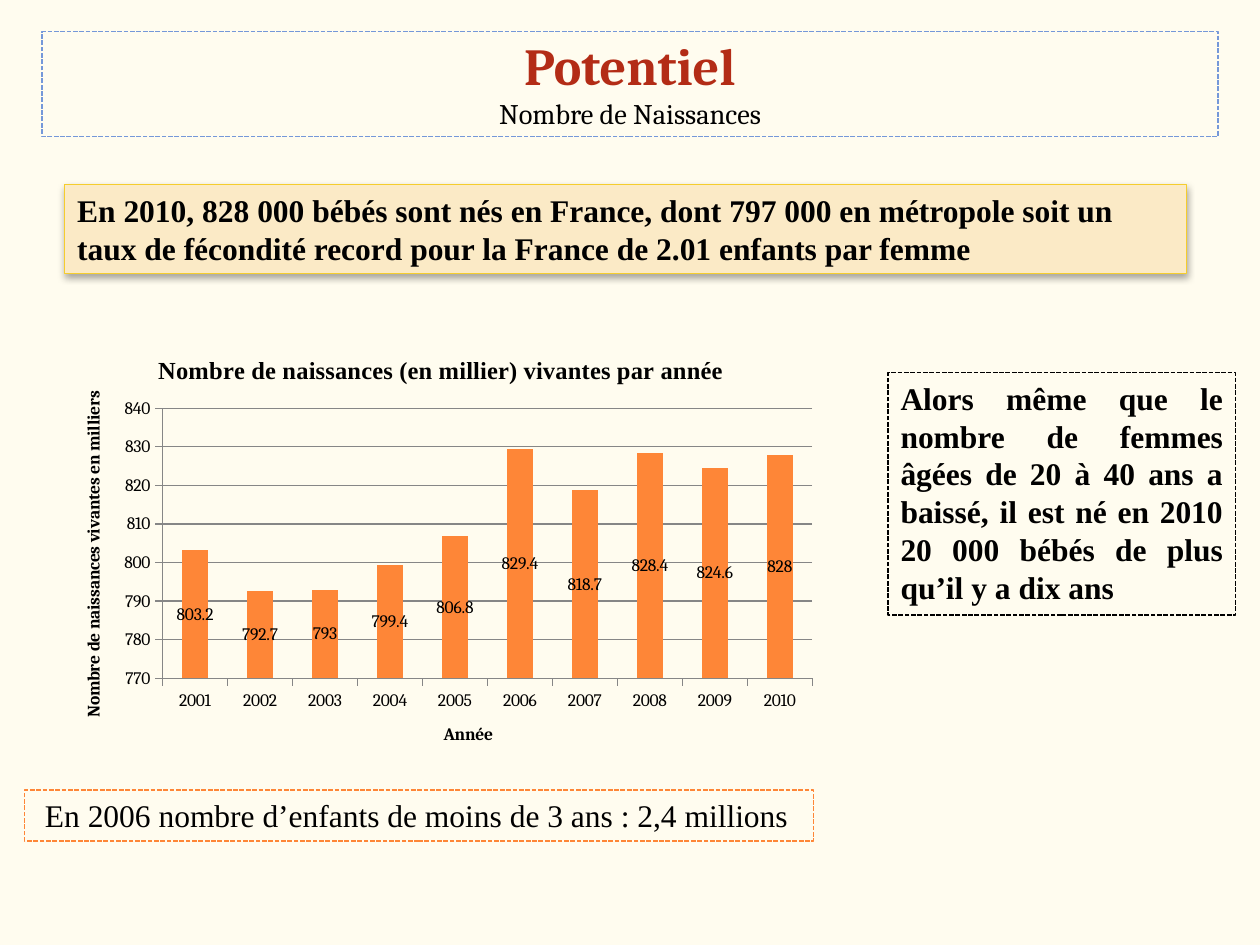
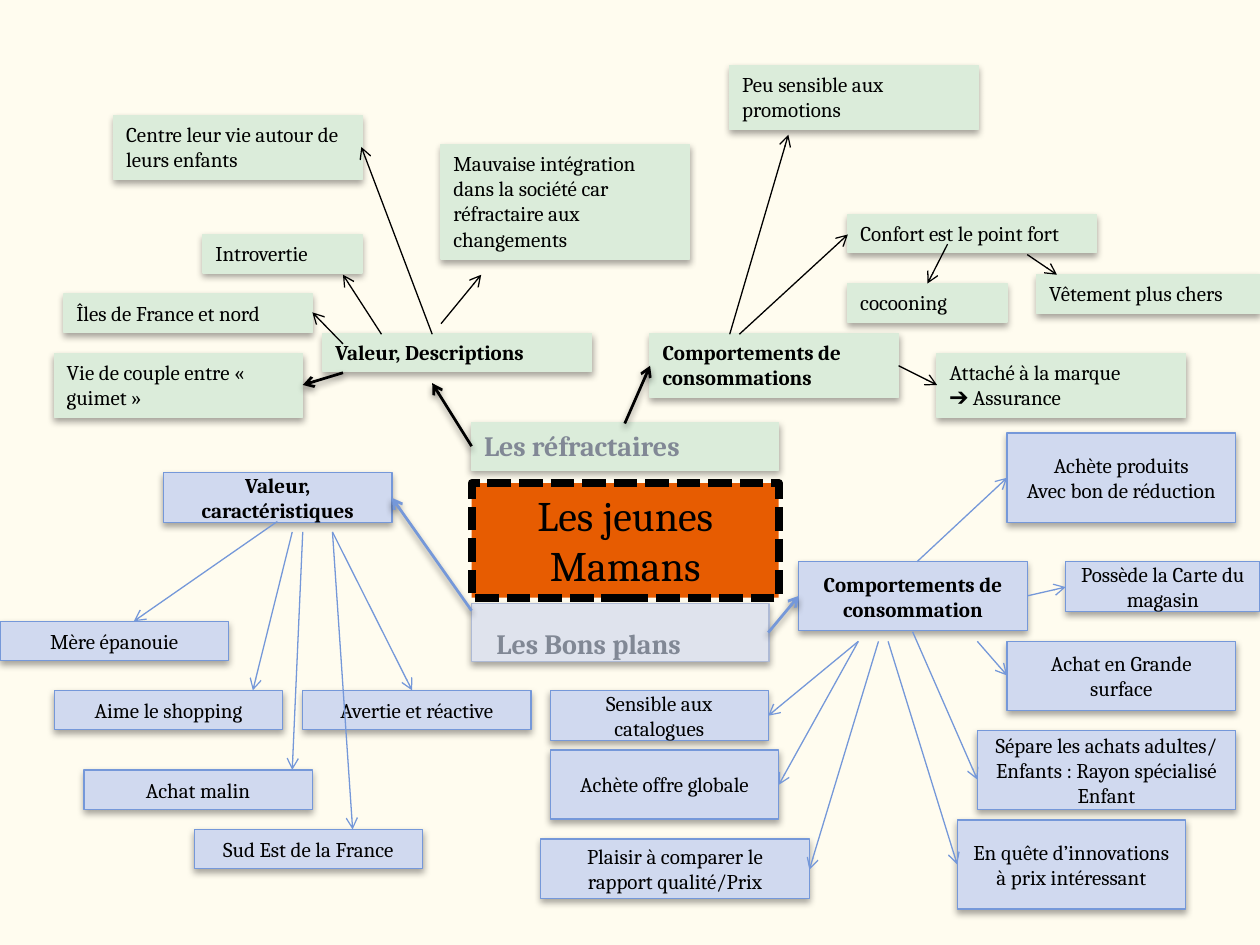
from lxml import etree
from pptx import Presentation
from pptx.chart.data import CategoryChartData
from pptx.dml.color import RGBColor
from pptx.enum.chart import XL_CHART_TYPE, XL_LABEL_POSITION, XL_TICK_MARK
from pptx.enum.dml import MSO_LINE
from pptx.enum.shapes import MSO_CONNECTOR, MSO_SHAPE
from pptx.enum.text import MSO_ANCHOR, PP_ALIGN
from pptx.oxml import parse_xml
from pptx.oxml.ns import nsdecls, qn
from pptx.util import Pt

LEFT, CENTER, JUSTIFY = PP_ALIGN.LEFT, PP_ALIGN.CENTER, PP_ALIGN.JUSTIFY
TOP, MIDDLE, BOTTOM = MSO_ANCHOR.TOP, MSO_ANCHOR.MIDDLE, MSO_ANCHOR.BOTTOM
DASH = MSO_LINE.SQUARE_DOT
OUTSIDE = XL_TICK_MARK.OUTSIDE

SERIF, TIMES = "Cambria", "Times New Roman"
CREAM, BLACK, GREY = "FFFCEF", "000000", "818895"
BLUE, PALE_BLUE, GREEN, ORANGE = "7598D9", "D0D9EF", "DBECDA", "FE8637"

rgb = RGBColor.from_string


def paint(shape, line, width, fill=None, dash=None, shadow=0):
    """Set outline, fill and shadow; shadow is an opacity in percent."""
    shape.line.color.rgb = rgb(line)
    shape.line.width = Pt(width)
    if dash:
        shape.line.dash_style = dash
    if fill:
        shape.fill.solid()
        shape.fill.fore_color.rgb = rgb(fill)
    effects = etree.SubElement(shape._element.spPr, qn("a:effectLst"))
    if shadow:
        effects.append(parse_xml(
            f'<a:outerShdw {nsdecls("a")} blurRad="{Pt(4)}" dist="{Pt(2)}" dir="5400000" rotWithShape="0">'
            f'<a:srgbClr val="{BLACK}"><a:alpha val="{shadow * 1000}"/></a:srgbClr></a:outerShdw>'))


def add_box(slide, box, text, size=12, font=SERIF, bold=False, color=BLACK,
            align=LEFT, anchor=TOP, indent=7.2, spacing=None, **look):
    shape = slide.shapes.add_shape(MSO_SHAPE.RECTANGLE, *map(Pt, box))
    paint(shape, **look)
    frame = shape.text_frame
    frame.word_wrap = True
    frame.vertical_anchor = anchor
    frame.margin_left = Pt(indent)
    frame.text = text
    for paragraph in frame.paragraphs:
        paragraph.alignment = align
        paragraph.line_spacing = spacing
        paragraph.font.size = Pt(size)
        paragraph.font.name = font
        paragraph.font.bold = bold
        paragraph.font.color.rgb = rgb(color)


presentation = Presentation()
presentation.slide_width, presentation.slide_height = Pt(720), Pt(540)
background = presentation.slide_master.background.fill
background.solid()
background.fore_color.rgb = rgb(CREAM)

# Slide 1: births
slide = presentation.slides.add_slide(presentation.slide_layouts[5])
title = slide.shapes.title
title.left, title.top, title.width, title.height = map(Pt, (24, 18, 672, 60))
paint(title, BLUE, 0.9, CREAM, DASH)
title.text_frame.vertical_anchor = BOTTOM
paragraph = title.text_frame.paragraphs[0]
paragraph.alignment = CENTER
paragraph.font.name = SERIF
for text, size, color, bold in [("Potentiel", 29.7, "B32C16", True),
                                ("Nombre de Naissances", 16.2, BLACK, False)]:
    if paragraph.runs:
        paragraph.add_line_break()
    run = paragraph.add_run()
    run.text = text
    run.font.size = Pt(size)
    run.font.bold = bold
    run.font.color.rgb = rgb(color)

add_box(slide, (37, 105.5, 641, 51),
        "En 2010, 828 000 bébés sont nés en France, dont 797 000 en métropole soit un "
        "taux de fécondité record pour la France de 2.01 enfants par femme",
        18, TIMES, True, line="F5CD2D", width=0.75, fill="FBEAC6", shadow=35)
add_box(slide, (507.5, 213, 198.5, 138.5),
        "Alors même que le nombre de femmes âgées de 20 à 40 ans a baissé, il est né en "
        "2010 20 000 bébés de plus qu’il y a dix ans",
        18, TIMES, True, align=JUSTIFY, line=BLACK, width=0.9, fill=CREAM, dash=DASH)

# Chart of births per year
data = CategoryChartData()
data.categories = [str(year) for year in range(2001, 2011)]
data.add_series("Series 1", (803.2, 792.7, 793, 799.4, 806.8, 829.4, 818.7, 828.4, 824.6, 828))
chart = slide.shapes.add_chart(XL_CHART_TYPE.COLUMN_STACKED, Pt(31), Pt(191), Pt(442), Pt(249), data).chart
chart.has_legend = False
chart.font.size = Pt(10)
chart.font.name = SERIF
chart.font.color.rgb = rgb(BLACK)

category_axis, value_axis = chart.category_axis, chart.value_axis
value_axis.minimum_scale, value_axis.maximum_scale, value_axis.major_unit = 770, 840, 10
for owner, text, size, font in [
    (chart, "Nombre de naissances (en millier) vivantes par année", 14, TIMES),
    (category_axis, "Année", 10, SERIF),
    (value_axis, "Nombre de naissances vivantes en milliers", 10, SERIF),
]:
    heading = owner.chart_title if owner is chart else owner.axis_title
    heading.text_frame.text = text
    paragraph = heading.text_frame.paragraphs[0]
    paragraph.font.size = Pt(size)
    paragraph.font.name = font
    paragraph.font.bold = True
    paragraph.font.color.rgb = rgb(BLACK)
for axis in (category_axis, value_axis):
    axis.major_tick_mark = OUTSIDE
    axis.format.line.color.rgb = rgb("868686")
value_axis.major_gridlines.format.line.color.rgb = rgb("868686")

plot = chart.plots[0]
plot.gap_width, plot.overlap, plot.vary_by_categories = 150, 100, False
births = plot.series[0]
births.format.fill.solid()
births.format.fill.fore_color.rgb = rgb(ORANGE)
births.data_labels.show_value = True
births.data_labels.position = XL_LABEL_POSITION.CENTER

# Fixed plot area
plot_area = chart._chartSpace.chart.plotArea
for old_layout in plot_area.findall(qn("c:layout")):
    plot_area.remove(old_layout)
plot_area.insert(0, parse_xml(
    f'<c:layout {nsdecls("c")}><c:manualLayout><c:layoutTarget val="inner"/>'
    '<c:xMode val="edge"/><c:yMode val="edge"/>'
    '<c:x val="0.14"/><c:y val="0.17"/><c:w val="0.84"/><c:h val="0.62"/>'
    '</c:manualLayout></c:layout>'))

add_box(slide, (14, 451.5, 451, 29), "En 2006 nombre d’enfants de moins de 3 ans : 2,4 millions",
        18, TIMES, indent=11.7, line=ORANGE, width=0.9, fill=CREAM, dash=DASH)

# Slide 2: mind map of young mothers
slide = presentation.slides.add_slide(presentation.slide_layouts[6])
add_box(slide, (269.5, 276, 175.5, 65.5), "Les jeunes Mamans", 24, align=CENTER,
        line=BLACK, width=4.5, fill="E75C01", dash=DASH)
green_look = dict(line=GREEN, width=0.75, fill=GREEN, shadow=35)
blue_look = dict(line=BLUE, width=0.75, fill=PALE_BLUE, shadow=35, align=CENTER, anchor=MIDDLE)
add_box(slide, (269.5, 241.5, 175.5, 27), "Les réfractaires", 16, bold=True, color=GREY, **green_look)
add_box(slide, (269.5, 345, 170, 33), "Les Bons plans", 16, bold=True, color=GREY, indent=14.2,
        spacing=1.5, line="AEBAD5", width=0.75, fill="DFE3ED", shadow=35)

# Headings of the four branches
add_box(slide, (184.5, 190.5, 153.5, 22), "Valeur, Descriptions", bold=True, **green_look)
add_box(slide, (371.5, 190.5, 142, 36.5), "Comportements de consommations", bold=True, **green_look)
add_box(slide, (93.5, 270, 130.5, 28.5), "Valeur, caractéristiques", bold=True, **blue_look)
add_box(slide, (456.5, 321, 130.5, 39.5), "Comportements de consommation", bold=True, **blue_look)

green_leaves = [
    (116, 134, 91, 22, "Introvertie"),
    (31, 202, 142, 36.5, "Vie de couple entre « guimet »"),
    (65, 66, 142, 36.5, "Centre leur vie autour de leurs enfants"),
    (252, 82.5, 142, 65.5, "Mauvaise intégration dans la société car réfractaire aux changements"),
    (417, 37.5, 142, 36.5, "Peu sensible aux promotions"),
    (484.5, 122.5, 142, 22, "Confort est le point fort"),
    (592.5, 157, 127.5, 22, "Vêtement plus chers"),
    (484.5, 162, 91, 22, "cocooning"),
    (36.5, 168, 142, 22, "Îles de France et nord"),
    (535.5, 202, 142, 36.5, "Attaché à la marque\n➔ Assurance"),
]
blue_leaves = [
    (0, 355, 130.5, 22.5, "Mère épanouie"),
    (31, 394.5, 130.5, 22.5, "Aime le shopping"),
    (173, 394.5, 130.5, 22.5, "Avertie et réactive"),
    (48, 440, 130.5, 22.5, "Achat malin"),
    (111, 474, 130.5, 22.5, "Sud Est de la France"),
    (575.5, 247.5, 130.5, 51, "Achète produits\nAvec bon de réduction"),
    (609, 321, 111, 28.5, "Possède la Carte du magasin"),
    (575.5, 366.5, 130.5, 39.5, "Achat en Grande surface"),
    (558.5, 417.5, 147.5, 45, "Sépare les achats adultes/ Enfants : Rayon spécialisé Enfant"),
    (547, 468.5, 130.5, 51, "En quête d’innovations à prix intéressant"),
    (314.5, 394.5, 124.5, 28.5, "Sensible aux catalogues"),
    (314.5, 428.5, 130.5, 39.5, "Achète offre globale"),
    (309, 479.5, 153.5, 34, "Plaisir à comparer le rapport qualité/Prix"),
]
for leaves, look in [(green_leaves, green_look), (blue_leaves, blue_look)]:
    for *box, text in leaves:
        add_box(slide, box, text, **look)

# Arrows: start x, start y, end x, end y
thin_green = [
    (196, 196.5, 178.5, 178.5), (218, 191, 196, 157), (247, 191, 206.5, 84),
    (252, 185, 275, 157), (417, 191, 450.5, 77), (422.5, 191, 484.5, 134),
    (513.5, 209, 535.5, 220), (541.5, 139.5, 530, 162), (587, 145.5, 604, 157),
]
thick_green = [(196, 213, 173, 220), (357, 242, 371.5, 209), (269.5, 255, 247, 219)]
thin_blue = [
    (158.5, 298, 76.5, 355), (190, 304, 235.5, 394.5), (173, 304, 167, 440),
    (190, 304, 201.5, 474), (167, 304, 144.5, 394.5), (524, 321, 575.5, 273),
    (558.5, 366.5, 575.5, 386), (521.5, 361, 558.5, 445.5), (490.5, 366.5, 439, 409),
    (490.5, 366.5, 445, 448.5), (502, 366.5, 462.5, 497), (507.5, 366.5, 547, 494),
    (587, 340.5, 609, 335.5),
]
thick_blue = [(439, 361.5, 456.5, 340.5), (269.5, 349, 224, 284.5)]
for arrows, color, width, shadow in [
    (thin_green, BLACK, 0.75, 0), (thick_green, BLACK, 1.57, 45),
    (thin_blue, BLUE, 0.75, 0), (thick_blue, BLUE, 1.57, 45),
]:
    for ends in arrows:
        arrow = slide.shapes.add_connector(MSO_CONNECTOR.STRAIGHT, *map(Pt, ends))
        paint(arrow, color, width, shadow=shadow)
        etree.SubElement(arrow.line._get_or_add_ln(), qn("a:tailEnd"), type="arrow")

presentation.save("out.pptx")
